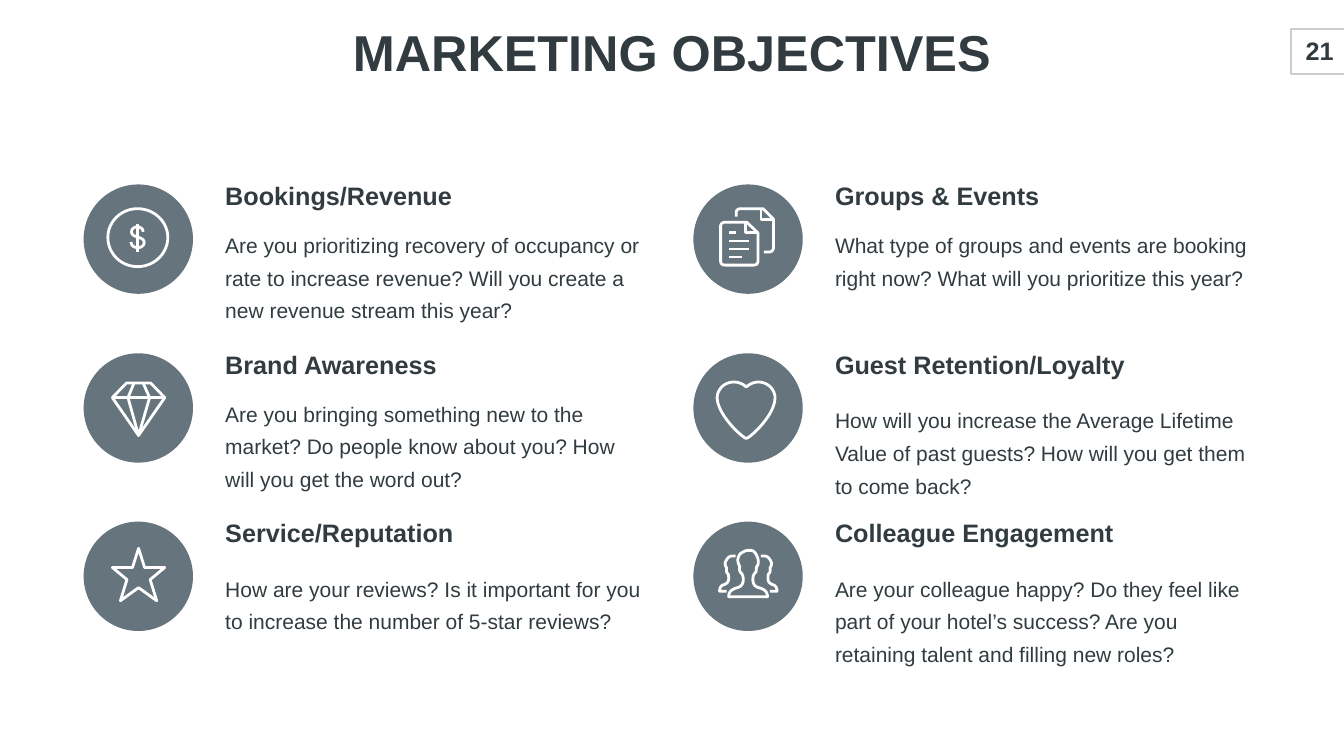
from pptx import Presentation
from pptx.dml.color import RGBColor
from pptx.enum.shapes import MSO_SHAPE as Kind
from pptx.enum.text import MSO_ANCHOR as Anchor, PP_ALIGN as Align
from pptx.util import Pt

PX = 9144
DARK, SLATE, GREY, WHITE = "323C40", "66747D", "CDCDCD", "FFFFFF"
SIZE, STEP = 217, 1210
tint = RGBColor.from_string

deck = Presentation()
deck.slide_width, deck.slide_height = 2667 * PX, 1500 * PX
slide = deck.slides.add_slide(deck.slide_layouts[6])
shapes = slide.shapes


def write(text, x, y, w, h, size=30, bold=False, align=Align.LEFT,
          anchor=Anchor.TOP, space=1.0, pad=0):
    frame = shapes.add_textbox(x * PX, y * PX, w * PX, h * PX).text_frame
    frame.word_wrap = True
    frame.vertical_anchor = anchor
    frame.margin_left = frame.margin_right = pad * PX
    frame.margin_top = frame.margin_bottom = pad * PX
    para = frame.paragraphs[0]
    para.alignment, para.line_spacing = align, space
    run = para.add_run()
    run.text = text
    run.font.name, run.font.size, run.font.bold = "Arial", Pt(size), bold
    run.font.color.rgb = tint(DARK)


def trace(stroke):
    points = [stroke[0]]
    for part in stroke[1:]:
        if len(part) == 2:
            points.append(part)
            continue
        ends = points[-1] + part
        for step in range(1, 13):
            t = step / 12
            mix = (1 - t) ** 3, 3 * t * (1 - t) ** 2, 3 * t * t * (1 - t), t ** 3
            points.append(tuple(sum(m * e for m, e in zip(mix, ends[axis::2]))
                                for axis in (0, 1)))
    return [(round(x * PX), round(y * PX)) for x, y in points]


coin = [
    [(107, 48), (140, 48, 167, 74, 167, 105), (167, 137, 140, 163, 107, 163),
     (74, 163, 48, 137, 48, 105), (48, 74, 74, 48, 107, 48)],
    [(118, 94), (118, 81, 95, 81, 95, 94), (95, 107, 120, 102, 120, 115),
     (120, 129, 94, 129, 94, 114)],
    [(107, 78), (107, 133)],
]
gem = [
    [(85, 59), (133, 59), (161, 88), (109, 163), (57, 88), (85, 59)],
    [(57, 88), (161, 88)],
    [(100, 59), (88, 88), (109, 163), (131, 88), (118, 59)],
]
star = [[(109, 53), (121, 91), (161, 91), (132, 115), (145, 157), (109, 131),
         (73, 157), (86, 115), (57, 91), (97, 91), (109, 53)]]
pages = [
    [(106, 75), (63, 75), (57, 75, 54, 79, 54, 82), (54, 152),
     (54, 157, 57, 160, 63, 160), (119, 160), (125, 160, 128, 157, 128, 152),
     (128, 96), (106, 75)],
    [(103, 75), (103, 96), (128, 96)],
    [(85, 64), (85, 55), (85, 51, 89, 48, 94, 48), (138, 48), (159, 69),
     (159, 125), (159, 130, 155, 134, 150, 134), (140, 134)],
    [(134, 48), (134, 69), (159, 69)],
]
for row, end in enumerate((85, 110, 110, 97)):
    pages.append([(71, 96 + 16 * row), (end, 96 + 16 * row)])
heart = [[(105, 67), (111, 61, 120, 57, 129, 57), (147, 57, 162, 71, 162, 89),
          (161, 124, 113, 167, 105, 169), (97, 167, 49, 124, 47, 89),
          (47, 71, 62, 57, 80, 57), (90, 57, 99, 61, 105, 67)]]
side = [(134, 68), (139, 68), (146, 68, 150, 71, 154, 79),
        (157, 84, 153, 90, 152, 92), (153, 98, 152, 100, 151, 102),
        (148, 104, 148, 107, 148, 113), (148, 121, 153, 123, 157, 125),
        (162, 126, 166, 130, 166, 138), (152, 138)]
flip = [tuple(v if i % 2 else 218 - v for i, v in enumerate(part)) for part in side]
crew = [
    [(70, 149), (147, 149), (147, 135, 135, 133, 130, 131),
     (126, 130, 118, 127, 118, 115), (118, 106, 121, 103, 124, 100),
     (125, 98, 125, 93, 125, 90), (130, 85, 130, 77, 126, 68),
     (122, 59, 118, 57, 112, 57), (104, 57, 103, 58, 101, 59),
     (95, 62, 92, 63, 89, 71), (87, 77, 89, 84, 92, 89),
     (91, 95, 92, 98, 93, 100), (96, 103, 99, 106, 99, 115),
     (99, 127, 91, 130, 87, 131), (82, 133, 70, 135, 70, 149)],
    side, flip,
]

goals = [
    (0, 366, 80, coin, "Bookings/Revenue",
     "Are you prioritizing recovery of occupancy or rate to increase revenue? "
     "Will you create a new revenue stream this year?"),
    (0, 701, 80, gem, "Brand Awareness",
     "Are you bringing something new to the market? Do people know about you? "
     "How will you get the word out?"),
    (0, 1035, 93, star, "Service/Reputation",
     "How are your reviews? Is it important for you to increase the number of "
     "5-star reviews?"),
    (1, 366, 80, pages, "Groups & Events",
     "What type of groups and events are booking right now? What will you "
     "prioritize this year?"),
    (1, 701, 93, heart, "Guest Retention/Loyalty",
     "How will you increase the Average Lifetime Value of past guests? How will "
     "you get them to come back?"),
    (1, 1035, 93, crew, "Colleague Engagement",
     "Are your colleague happy? Do they feel like part of your hotel’s success? "
     "Are you retaining talent and filling new roles?"),
]

frame = shapes.add_shape(Kind.RECTANGLE, 2561 * PX, 57 * PX, 115 * PX, 89 * PX)
frame.shadow.inherit = False
frame.fill.background()
frame.line.color.rgb, frame.line.width = tint(GREY), Pt(3)
write("21", 2563, 64, 111, 72, size=36, bold=True, align=Align.CENTER,
      anchor=Anchor.BOTTOM, pad=6)
write("MARKETING OBJECTIVES", 543, 64, 1581, 98, size=72, bold=True,
      align=Align.CENTER, anchor=Anchor.MIDDLE, space=0.8)

for col, top, gap, icon, title, body in goals:
    left = 166 + col * STEP
    disc = shapes.add_shape(Kind.OVAL, left * PX, top * PX, SIZE * PX, SIZE * PX)
    disc.shadow.inherit = False
    disc.fill.solid()
    disc.fill.fore_color.rgb = tint(SLATE)
    disc.line.fill.background()

    lines = [trace(stroke) for stroke in icon]
    pen = shapes.build_freeform(*lines[0][0])
    for line in lines:
        pen.move_to(*line[0])
        pen.add_line_segments(line[1:], close=line[0] == line[-1])
    mark = pen.convert_to_shape(left * PX, top * PX)
    mark.shadow.inherit = False
    mark.fill.background()
    mark.line.color.rgb, mark.line.width = tint(WHITE), Pt(4)

    write(title, left + 281, top + 3, 797, 49, size=36, bold=True,
          anchor=Anchor.MIDDLE, space=0.8)
    write(body, left + 281, top + gap, 843, 200, space=1.3)

deck.save("out.pptx")
